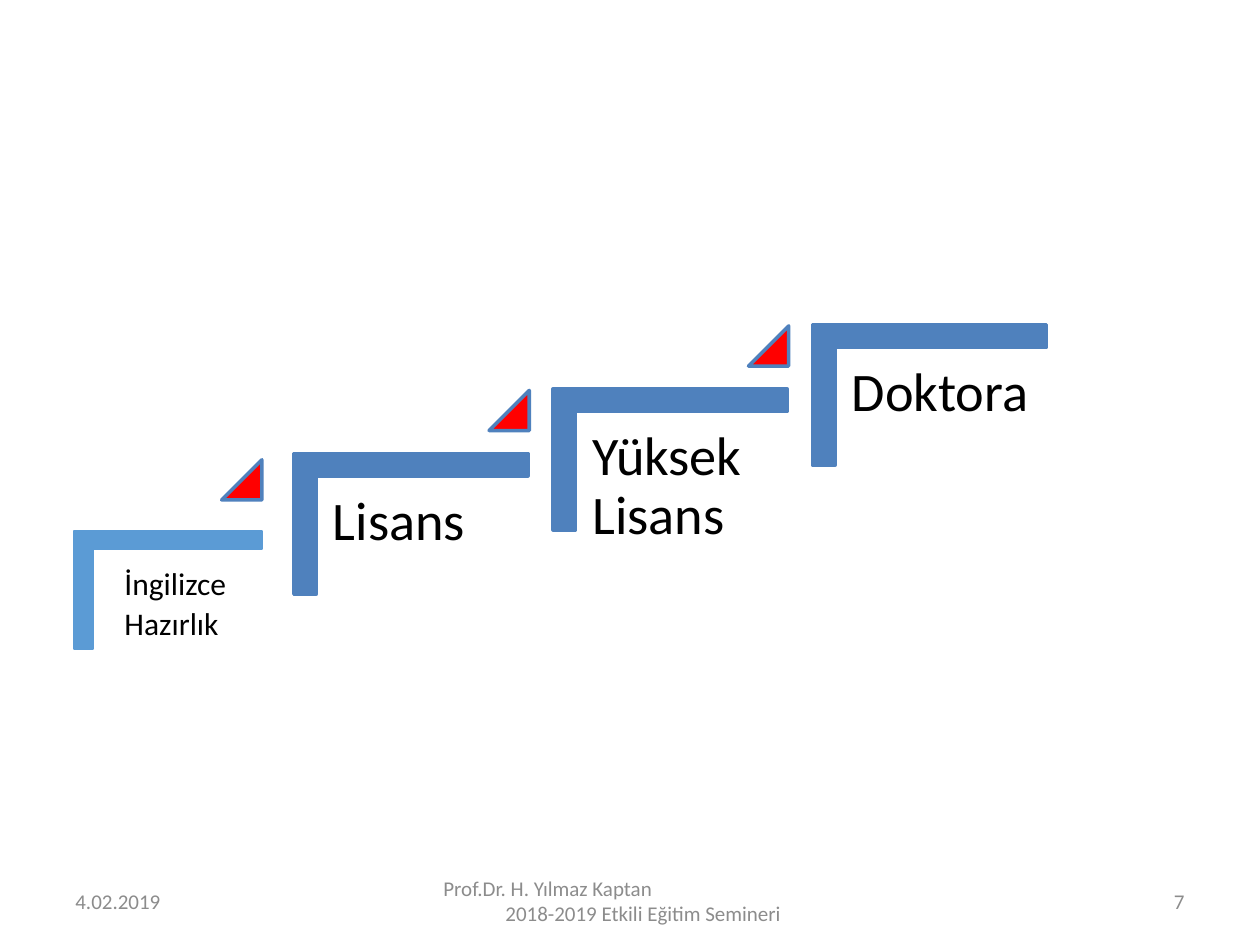
from dataclasses import dataclass
from typing import NamedTuple

from pptx import Presentation
from pptx.dml.color import RGBColor
from pptx.enum.shapes import MSO_SHAPE
from pptx.enum.text import MSO_ANCHOR, PP_ALIGN
from pptx.util import Cm, Pt


@dataclass(frozen=True)
class Theme:
    font: str = "Calibri"
    blue: RGBColor = RGBColor(0x4F, 0x81, 0xBD)
    sky: RGBColor = RGBColor(0x5B, 0x9B, 0xD5)
    red: RGBColor = RGBColor(0xFF, 0, 0)
    ink: RGBColor = RGBColor(0, 0, 0)
    gray: RGBColor = RGBColor(0x8C, 0x8C, 0x8C)
    large: float = 31
    small: float = 18
    foot: float = 12


class Box(NamedTuple):
    left: float
    top: float
    width: float
    height: float


@dataclass(frozen=True)
class Label:
    lines: tuple[str, ...]
    box: Box
    size: float
    color: RGBColor
    spacing: float = 1.0
    inset: float = 0.25
    align: PP_ALIGN = PP_ALIGN.LEFT
    anchor: MSO_ANCHOR = MSO_ANCHOR.TOP
    indent: float = 0


theme = Theme()
STEPS = ("Lisans", "Yüksek Lisans", "Doktora")
START_X, START_Y = 6.86, 8.2
RUN, RISE = 5.23, 1.3
FOOT_Y, FOOT_H = 17.65, 1.02


def paint(shape, fill: RGBColor, line: RGBColor, width: float) -> None:
    shape.shadow.inherit = False
    shape.fill.solid()
    shape.fill.fore_color.rgb = fill
    shape.line.color.rgb = line
    shape.line.width = Pt(width)


def write(slide, label: Label) -> None:
    frame = slide.shapes.add_textbox(*map(Cm, label.box)).text_frame
    frame.word_wrap = True
    frame.vertical_anchor = label.anchor
    frame.margin_left = frame.margin_right = Cm(label.inset)
    frame.margin_top = frame.margin_bottom = Cm(label.inset if label.inset > 0.25 else 0.13)
    for index, line in enumerate(label.lines):
        para = frame.add_paragraph() if index else frame.paragraphs[0]
        para.text = line
        para.alignment = label.align
        para.line_spacing = label.spacing
        if index and label.indent:
            para._p.get_or_add_pPr().set("marL", str(Cm(label.indent)))
        para.font.name = theme.font
        para.font.size = Pt(label.size)
        para.font.color.rgb = label.color


def mark(slide, left: float, top: float) -> None:
    shape = slide.shapes.add_shape(
        MSO_SHAPE.ISOSCELES_TRIANGLE, Cm(left), Cm(top), Cm(0.81), Cm(0.81))
    shape.adjustments[0] = 1
    paint(shape, theme.red, theme.blue, 2)


def step(slide, index: int, text: str) -> None:
    left, top = START_X + index * RUN, START_Y - index * RISE
    shape = slide.shapes.add_shape(
        MSO_SHAPE.CORNER, Cm(left), Cm(top), Cm(2.84), Cm(4.72))
    shape.rotation = 90
    shape.adjustments[0] = shape.adjustments[1] = 0.16
    paint(shape, theme.blue, theme.blue, 2)
    write(slide, Label((text,), Box(left - 0.48, top + 1.42, 4.27, 3.76),
                       theme.large, theme.ink, 0.9, 0.33))
    if index < len(STEPS) - 1:
        mark(slide, left + 3, top - 0.33)


def entry(slide) -> None:
    left, top, right, base, thick = 1.5, 10.7, 5.28, 13.08, 0.37
    points = [(right, top), (right, top + thick), (left + thick, top + thick),
              (left + thick, base), (left, base)]
    pen = slide.shapes.build_freeform(Cm(left), Cm(top), scale=1.0)
    pen.add_line_segments([(Cm(x), Cm(y)) for x, y in points], close=True)
    paint(pen.convert_to_shape(), theme.sky, theme.sky, 1)
    write(slide, Label(("İngilizce", "Hazırlık"), Box(2.26, 11.18, 12.7, 1.9),
                       theme.small, theme.ink, 1.07))
    mark(slide, 4.47, 9.27)


def footer(slide) -> None:
    def part(lines: tuple[str, ...], left: float, width: float,
             align: PP_ALIGN = PP_ALIGN.LEFT, indent: float = 0) -> None:
        write(slide, Label(lines, Box(left, FOOT_Y, width, FOOT_H), theme.foot,
                           theme.gray, align=align, anchor=MSO_ANCHOR.MIDDLE,
                           indent=indent))

    part(("7",), 18.21, 5.92, PP_ALIGN.RIGHT)
    part(("4.02.2019",), 1.27, 5.92)
    part(("Prof.Dr. H. Yılmaz Kaptan", "2018-2019 Etkili Eğitim Semineri"),
         8.69, 8.05, indent=1.25)


def main() -> None:
    deck = Presentation()
    deck.slide_width, deck.slide_height = Cm(25.4), Cm(19.05)
    slide = deck.slides.add_slide(deck.slide_layouts[6])
    for index, text in enumerate(STEPS):
        step(slide, index, text)
    entry(slide)
    footer(slide)
    deck.save("out.pptx")


if __name__ == "__main__":
    main()
